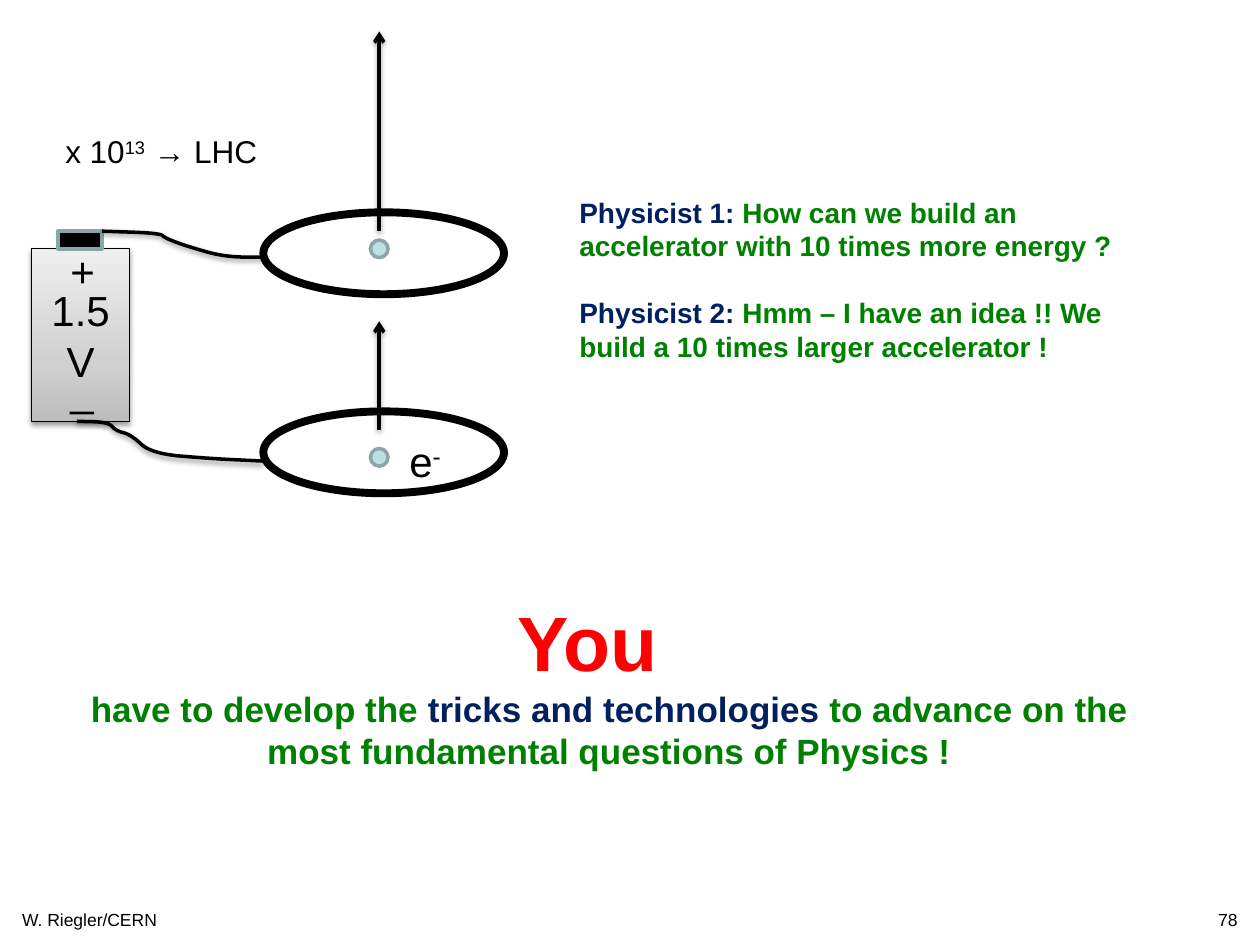
from copy import deepcopy

from lxml.etree import SubElement
from pptx import Presentation
from pptx.dml.color import RGBColor as RGB
from pptx.enum.shapes import MSO_CONNECTOR as LINK, MSO_SHAPE as SHAPE
from pptx.enum.text import MSO_ANCHOR as ANCHOR, MSO_AUTO_SIZE as FIT, PP_ALIGN as ALIGN
from pptx.oxml.ns import qn
from pptx.util import Inches, Pt

THEME = {
    "font": "Arial",
    "ink": RGB.from_string("000000"),
    "paper": RGB.from_string("FFFFFF"),
    "electron": RGB.from_string("BBE0E3"),
    "rim": RGB.from_string("8AA6A8"),
    "metal": [(0, "BDBDBD"), (0.35, "D1D1D1"), (1, "EEEEEE")],
    "shadow": {"blurRad": str(Pt(3.1)), "dist": str(Pt(1.6)), "dir": "5400000"},
    "text": {
        "speaker": ("002060", {"size": Pt(16), "bold": True}),
        "speech": ("008000", {"size": Pt(16), "bold": True}),
        "shout": ("FF0000", {"size": Pt(44), "bold": True}),
        "appeal": ("008000", {"size": Pt(20), "bold": True}),
        "accent": ("002060", {"size": Pt(20), "bold": True}),
        "symbol": ("000000", {"size": Pt(24)}),
        "scale": ("000000", {"size": Pt(18)}),
        "footer": ("000000", {"size": Pt(10)}),
    },
}
GROW = {"word_wrap": True, "auto_size": FIT.SHAPE_TO_FIT_TEXT}
ONE_LINE = {"word_wrap": False, "auto_size": FIT.SHAPE_TO_FIT_TEXT}

deck = Presentation()
deck.slide_width, deck.slide_height = Inches(10), Inches(7.5)
CELL = deck.slide_width / 100
slide = deck.slides.add_slide(deck.slide_layouts[6])


def cells(*values):
    return [int(value * CELL) for value in values]


def write(frame, paragraphs, frame_format, align=ALIGN.LEFT, gap=0):
    for name, value in frame_format.items():
        setattr(frame, name, value)
    for number, runs in enumerate(paragraphs):
        paragraph = frame.add_paragraph() if number else frame.paragraphs[0]
        paragraph.alignment = align
        if number and gap:
            paragraph.space_before = Pt(gap)
        for words, role, *raised in runs:
            run = paragraph.add_run()
            run.text = words
            color, font_format = THEME["text"][role]
            run.font.color.rgb = RGB.from_string(color)
            for name, value in {"name": THEME["font"], **font_format}.items():
                setattr(run.font, name, value)
            if raised:
                run.font._element.set("baseline", "30000")


dialogue = slide.shapes.add_textbox(*cells(45, 15, 45.8, 17.2))
write(dialogue.text_frame, [
    [("Physicist 1: ", "speaker"),
     ("How can we build an accelerator with 10 times more energy ?", "speech")],
    [("Physicist 2: ", "speaker"),
     ("Hmm – I have an idea !! We build a 10 times larger accelerator !", "speech")],
], GROW, gap=19)

apparatus = slide.shapes.add_group_shape().shapes
battery_left, battery_top, battery_width, battery_height = 2.5, 19.75, 7.8, 13.7
battery_bottom = battery_top + battery_height
cap_left, cap_width, cap_height = 4.6, 3.5, 1.4
cap_top = battery_top - cap_height
plate_left, plate_width, plate_height = 20.9, 19.1, 6.5
electron_size, beam_x = 1.4, 30.1
outlined = []

battery = apparatus.add_shape(
    SHAPE.RECTANGLE, *cells(battery_left, battery_top, battery_width, battery_height))
battery.fill.gradient()
battery.fill.gradient_angle = 90
stop_list = battery._element.spPr.find(".//" + qn("a:gsLst"))
stop_list.insert(1, deepcopy(stop_list[0]))
for stop, (position, color) in zip(battery.fill.gradient_stops, THEME["metal"]):
    stop.position = position
    stop.color.rgb = RGB.from_string(color)
write(battery.text_frame, [[("1.5V", "symbol")]],
      {"word_wrap": True, "vertical_anchor": ANCHOR.MIDDLE}, ALIGN.CENTER)
outlined.append((battery, "ink", 0.75, True))

solids = [(SHAPE.RECTANGLE, (cap_left, cap_top, cap_width, cap_height), "ink", "rim", 2)]
flights = []
for plate_top, electron_top, flight_start, flight_end in [
    (16.85, 19.05, 18.3, 2.5),
    (32.65, 35.6, 34.1, 25.5),
]:
    electron_left = beam_x - electron_size / 2
    solids += [
        (SHAPE.OVAL, (plate_left, plate_top, plate_width, plate_height), "paper", "ink", 4.5),
        (SHAPE.OVAL, (electron_left, electron_top, electron_size, electron_size),
         "electron", "rim", 2),
    ]
    flights.append((beam_x, flight_start, beam_x, flight_end))

for preset, box, fill, rim, weight in solids:
    solid = apparatus.add_shape(preset, *cells(*box))
    solid.fill.solid()
    solid.fill.fore_color.rgb = THEME[fill]
    outlined.append((solid, rim, weight, False))

plus_wire = [(cap_left + cap_width, cap_top), (12.7, 18.5), (13.1, 18.9),
             (15, 19.6), (17.9, 20.4), (plate_left, 20.4)]
minus_wire = [(6.1, battery_bottom), (8.6, 33.5), (9.2, 34.2),
              (10.4, 34.5), (12, 36), (16.6, 36.4), (plate_left, 36.6)]
ROUNDINGS = 3
for route in (plus_wire, minus_wire):
    for _ in range(ROUNDINGS):
        softened = [route[0]]
        for (x1, y1), (x2, y2) in zip(route, route[1:]):
            softened += [(x1 + (x2 - x1) * share, y1 + (y2 - y1) * share)
                         for share in (0.25, 0.75)]
        route = softened + [route[-1]]
    tracer = apparatus.build_freeform(*cells(*route[0]))
    tracer.add_line_segments([cells(*point) for point in route[1:]], close=False)
    wire = tracer.convert_to_shape()
    wire.fill.background()
    outlined.append((wire, "ink", 2, True))

arrows = [apparatus.add_connector(LINK.STRAIGHT, *cells(*flight)) for flight in flights]
outlined += [(arrow, "ink", 2, True) for arrow in arrows]

for part, color, weight, shaded in outlined:
    part.line.color.rgb = THEME[color]
    part.line.width = Pt(weight)
    effects = SubElement(part._element.spPr, qn("a:effectLst"))
    if shaded:
        cast = SubElement(effects, qn("a:outerShdw"), THEME["shadow"], rotWithShape="0")
        tint = SubElement(cast, qn("a:srgbClr"), val=str(THEME["ink"]))
        SubElement(tint, qn("a:alpha"), val="38000")
for arrow in arrows:
    SubElement(arrow.line._get_or_add_ln(), qn("a:tailEnd"), type="arrow")

for canvas, box, runs in [
    (apparatus, (cap_left, 19, 4, 5), [("+", "symbol")]),
    (apparatus, (cap_left, 28.4, 3.9, 5), [("_", "symbol")]),
    (apparatus, (31.5, 34.1, 4.6, 5), [("e", "symbol"), ("-", "symbol", True)]),
    (slide.shapes, (4.2, 10, 17.6, 4),
     [("x 10", "scale"), ("13", "scale", True), (" → LHC", "scale")]),
]:
    label = canvas.add_textbox(*cells(*box))
    write(label.text_frame, [runs], ONE_LINE)

call = slide.shapes.add_textbox(*cells(5, 46.7, 86.7, 15.1))
write(call.text_frame, [
    [("You", "shout")],
    [("have to develop the ", "appeal"), ("tricks and technologies ", "accent"),
     ("to advance on the most fundamental questions of Physics !", "appeal")],
], GROW, ALIGN.CENTER)
for paragraph, right_indent in zip(call.text_frame.paragraphs, cells(3.4, 0)):
    paragraph._p.get_or_add_pPr().set("marR", str(right_indent))

footer_top = 71.65
for left, width, height, words, align in [
    (0, 14.2, 3.4, "W. Riegler/CERN", ALIGN.CENTER),
    (95, 4.2, 2.7, "78", ALIGN.RIGHT),
]:
    footer = slide.shapes.add_textbox(*cells(left, footer_top, width, height))
    write(footer.text_frame, [[(words, "footer")]], {"word_wrap": True}, align)

deck.save("out.pptx")
